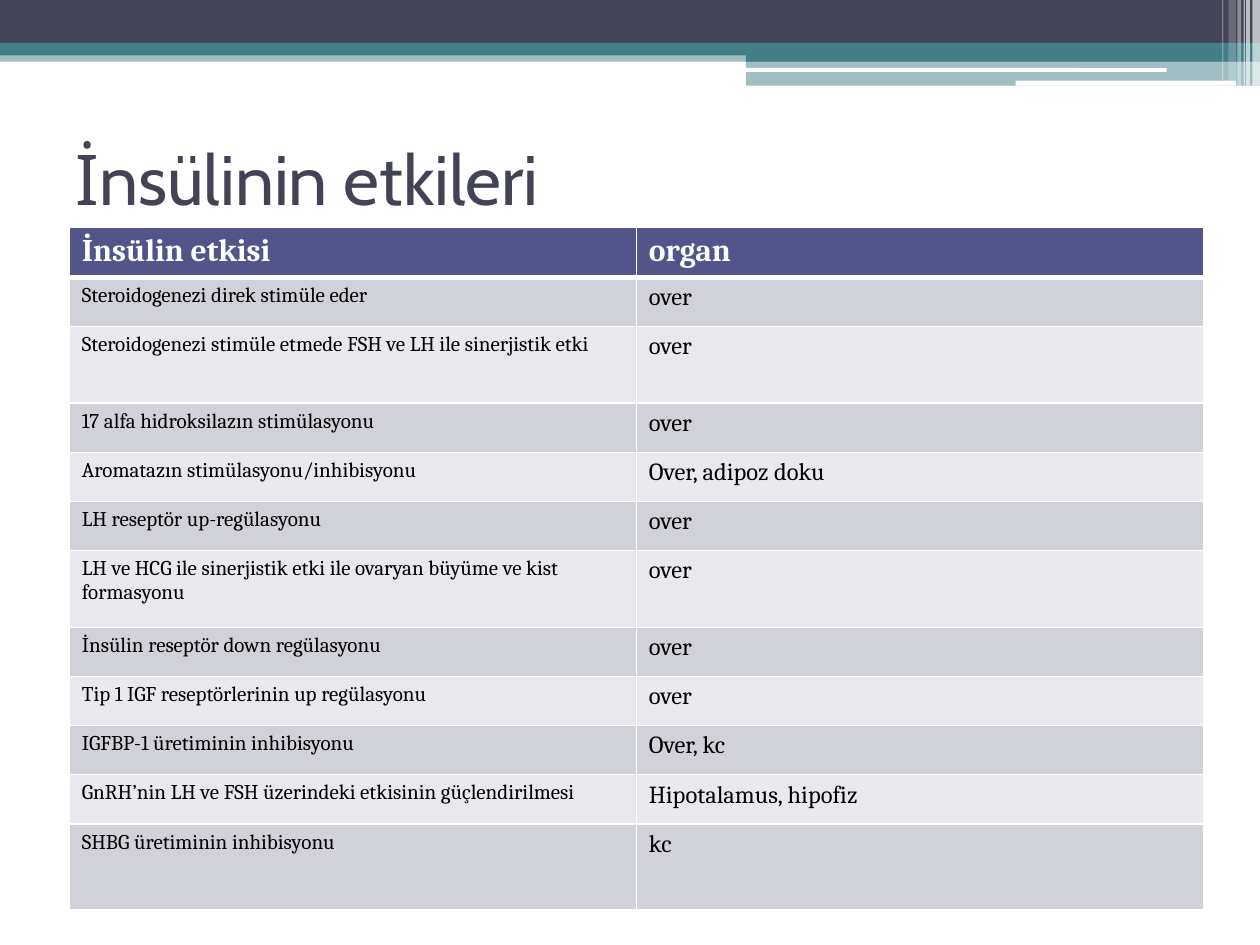
from dataclasses import dataclass

from lxml import etree
from pptx import Presentation
from pptx.dml.color import RGBColor
from pptx.enum.shapes import MSO_SHAPE
from pptx.enum.text import MSO_ANCHOR
from pptx.oxml.ns import qn
from pptx.util import Inches, Pt

RECT = MSO_SHAPE.RECTANGLE
ROUNDED = MSO_SHAPE.ROUNDED_RECTANGLE
MIDDLE = MSO_ANCHOR.MIDDLE


@dataclass(frozen=True)
class Theme:
    dark: str = "424456"
    teal: str = "438086"
    white: str = "FFFFFF"
    black: str = "000000"
    header: str = "53548A"
    bands: tuple = ("D1D1DA", "E9E9ED")
    title_font: str = "Cabin"
    body_font: str = "Cambria"
    title_size: int = 40
    header_size: int = 18
    column_sizes: tuple = (12, 14)


THEME = Theme()

# left, top, width, height, colour, opacity in percent
BANDS = [
    (0, 0.4, 10, 0.09, THEME.teal, 50),
    (0, 0, 10, 0.34, THEME.dark, 100),
    (0, 0.34, 10, 0.1, THEME.teal, 100),
    (5.92, 0.39, 4.08, 0.1, THEME.teal, 100),
    (5.92, 0.48, 4.08, 0.2, THEME.teal, 50),
]
ROUNDED_LINES = [(5.91, 0.54, 3.35, 0.03), (8.06, 0.64, 1.75, 0.04)]
# left, width, height, opacity in percent
STRIPES = [
    (9.94, 0.06, 0.68, 65),
    (9.89, 0.03, 0.68, 65),
    (9.87, 0.01, 0.68, 60),
    (9.82, 0.03, 0.68, 40),
    (9.75, 0.06, 0.64, 20),
    (9.7, 0.01, 0.64, 30),
]

HEADINGS = ("İnsülin etkisi", "organ")
EFFECTS = [
    ("Steroidogenezi direk stimüle eder", "over"),
    ("Steroidogenezi stimüle etmede FSH ve LH ile sinerjistik etki", "over"),
    ("17 alfa hidroksilazın stimülasyonu", "over"),
    ("Aromatazın stimülasyonu/inhibisyonu", "Over, adipoz doku"),
    ("LH reseptör up-regülasyonu", "over"),
    ("LH ve HCG ile sinerjistik etki ile ovaryan büyüme ve kist formasyonu", "over"),
    ("İnsülin reseptör down regülasyonu", "over"),
    ("Tip 1 IGF reseptörlerinin up regülasyonu", "over"),
    ("IGFBP-1 üretiminin inhibisyonu", "Over, kc"),
    ("GnRH’nin LH ve FSH üzerindeki etkisinin güçlendirilmesi", "Hipotalamus, hipofiz"),
    ("SHBG üretiminin inhibisyonu", "kc"),
]
ROW_HEIGHT = 0.39
TALL_ROWS = {2: 0.61, 6: 0.61, 11: 0.68}


def to_inches(box):
    return [Inches(length) for length in box]


def style_font(font, name, size, colour, bold=False):
    font.name = name
    font.size = Pt(size)
    font.bold = bold
    font.color.rgb = RGBColor.from_string(colour)


def add_block(page, box, colour, opacity=100, kind=RECT):
    block = page.shapes.add_shape(kind, *to_inches(box))
    block.shadow.inherit = False
    block.line.fill.background()
    block.fill.solid()
    block.fill.fore_color.rgb = RGBColor.from_string(colour)
    if opacity < 100:
        colour_node = block.fill._xPr.find(".//" + qn("a:srgbClr"))
        etree.SubElement(colour_node, qn("a:alpha"), val=str(opacity * 1000))


def add_banner(page, left, top):
    """Draw the layered bands, white lines and stripes from the given corner."""
    for x, y, width, height, colour, opacity in BANDS:
        add_block(page, (left + x, top + y, width, height), colour, opacity)
    for x, y, width, height in ROUNDED_LINES:
        add_block(page, (left + x, top + y, width, height), THEME.white, kind=ROUNDED)
    for x, width, height, opacity in STRIPES:
        add_block(page, (left + x, top, width, height), THEME.white, opacity)


def add_title(page, box, text):
    frame = page.shapes.add_textbox(*to_inches(box)).text_frame
    frame.word_wrap = True
    frame.vertical_anchor = MIDDLE
    para = frame.paragraphs[0]
    para.text = text
    style_font(para.font, THEME.title_font, THEME.title_size, THEME.dark)


def set_borders(cell, top, bottom):
    """Give the cell white borders; must run before its fill is set."""
    properties = cell._tc.get_or_add_tcPr()
    for side, width in (("L", 1), ("R", 1), ("T", top), ("B", bottom)):
        line = etree.SubElement(properties, qn("a:ln" + side), w=str(Pt(width)))
        fill = etree.SubElement(line, qn("a:solidFill"))
        etree.SubElement(fill, qn("a:srgbClr"), val=THEME.white)


def fill_cell(cell, text, row, column):
    is_header = row == 0
    set_borders(cell, top=3 if row == 1 else 1, bottom=3 if is_header else 1)
    cell.fill.solid()
    background = THEME.header if is_header else THEME.bands[(row - 1) % 2]
    cell.fill.fore_color.rgb = RGBColor.from_string(background)
    para = cell.text_frame.paragraphs[0]
    para.text = text
    size = THEME.header_size if is_header else THEME.column_sizes[column]
    colour = THEME.white if is_header else THEME.black
    style_font(para.font, THEME.body_font, size, colour, is_header)


def add_effects_table(page, box):
    rows = [HEADINGS, *EFFECTS]
    table = page.shapes.add_table(len(rows), len(HEADINGS), *to_inches(box)).table
    for row, texts in enumerate(rows):
        table.rows[row].height = Inches(TALL_ROWS.get(row, ROW_HEIGHT))
        for column, text in enumerate(texts):
            fill_cell(table.cell(row, column), text, row, column)


def main():
    deck = Presentation()
    deck.slide_width, deck.slide_height = Inches(10), Inches(7.5)
    page = deck.slides.add_slide(deck.slide_layouts[6])
    add_banner(page, 0, 0)
    add_title(page, (0.5, 0.94, 9, 0.94), "İnsülinin etkileri")
    add_effects_table(page, (0.55, 1.8, 9, 5.43))
    deck.save("out.pptx")


if __name__ == "__main__":
    main()
